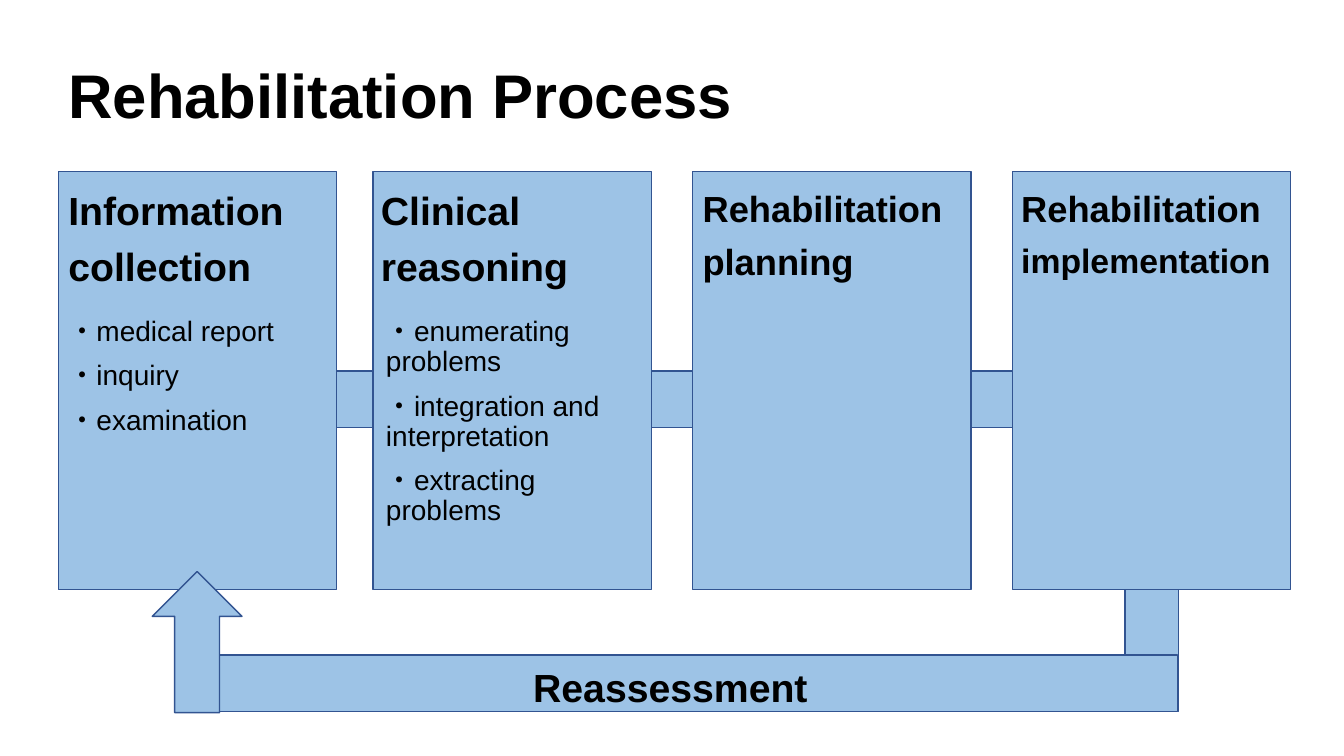
import pptx
import pptx.dml.color
import pptx.enum.shapes
import pptx.enum.text
import pptx.util
from dataclasses import dataclass

Inches = pptx.util.Inches
SHAPES = pptx.enum.shapes.MSO_SHAPE
ANCHORS = pptx.enum.text.MSO_ANCHOR


@dataclass(frozen=True)
class Theme:
    font: str = "Arial"
    fill: str = "9DC3E6"
    outline: str = "325491"
    text: str = "000000"
    title_size: float = 44
    heading_size: float = 28
    long_heading_size: float = 25.9
    longest_heading_size: float = 24.1
    item_size: float = 20


theme = Theme()

presentation = pptx.Presentation()
presentation.slide_width = Inches(13.33)
presentation.slide_height = Inches(7.5)
slide = presentation.slides.add_slide(presentation.slide_layouts[6])


def add_block(kind, left, top, width, height):
    shape = slide.shapes.add_shape(
        kind, Inches(left), Inches(top), Inches(width), Inches(height))
    shape.shadow.inherit = False
    shape.fill.solid()
    shape.fill.fore_color.rgb = pptx.dml.color.RGBColor.from_string(theme.fill)
    shape.line.color.rgb = pptx.dml.color.RGBColor.from_string(theme.outline)
    shape.line.width = pptx.util.Pt(1)


def add_text(lines, left, top, width, height, bold=True, space_before=10,
             anchor=ANCHORS.TOP):
    """Add a text box with one paragraph per (text, size) pair."""
    box = slide.shapes.add_textbox(
        Inches(left), Inches(top), Inches(width), Inches(height))
    frame = box.text_frame
    frame.word_wrap = True
    frame.vertical_anchor = anchor
    frame.text = "\n".join(text for text, size in lines)
    for paragraph, (text, size) in zip(frame.paragraphs, lines):
        paragraph.line_spacing = 0.9
        paragraph.space_before = pptx.util.Pt(space_before)
        font = paragraph.runs[0].font
        font.name = theme.font
        font.size = pptx.util.Pt(size)
        font.bold = bold
        font.color.rgb = pptx.dml.color.RGBColor.from_string(theme.text)


# Bars that run behind the stage panels
add_block(SHAPES.RECTANGLE, 11.16, 5.75, 0.53, 1.31)
add_block(SHAPES.RECTANGLE, 0.92, 3.68, 11.27, 0.56)

add_text([("Rehabilitation Process", theme.title_size)],
         0.58, 0.25, 11.5, 1.45, space_before=0, anchor=ANCHORS.MIDDLE)

# Panel left, heading left, heading width, heading lines, items left, items
stages = [
    (0.58, 0.58, 2.73,
     [("Information", theme.heading_size), ("collection", theme.heading_size)],
     0.58, ["・medical report", "・inquiry", "・examination"]),
    (3.7, 3.68, 2.8,
     [("Clinical", theme.heading_size), ("reasoning", theme.heading_size)],
     3.73, ["・enumerating problems", "・integration and interpretation",
            "・extracting problems"]),
    (6.87, 6.87, 2.76,
     [("Rehabilitation", theme.long_heading_size),
      ("planning", theme.long_heading_size)],
     6.87, []),
    (10.04, 10.03, 2.76,
     [("Rehabilitation", theme.long_heading_size),
      ("implementation", theme.longest_heading_size)],
     10.04, []),
]
for panel_left, heading_left, heading_width, heading, items_left, items in stages:
    add_block(SHAPES.RECTANGLE, panel_left, 1.7, 2.76, 4.15)
    add_text(heading, heading_left, 1.85, heading_width, 1.45)
    if items:
        add_text([(item, theme.item_size) for item in items],
                 items_left, 3.1, 2.73, 2.57, bold=False)

# Feedback loop from the last stage to the first
add_block(SHAPES.RECTANGLE, 1.94, 6.5, 9.74, 0.56)
add_block(SHAPES.UP_ARROW, 1.51, 5.67, 0.89, 1.4)
add_text([("Reassessment", theme.heading_size)], 5.19, 6.58, 2.96, 0.56)

presentation.save("out.pptx")
